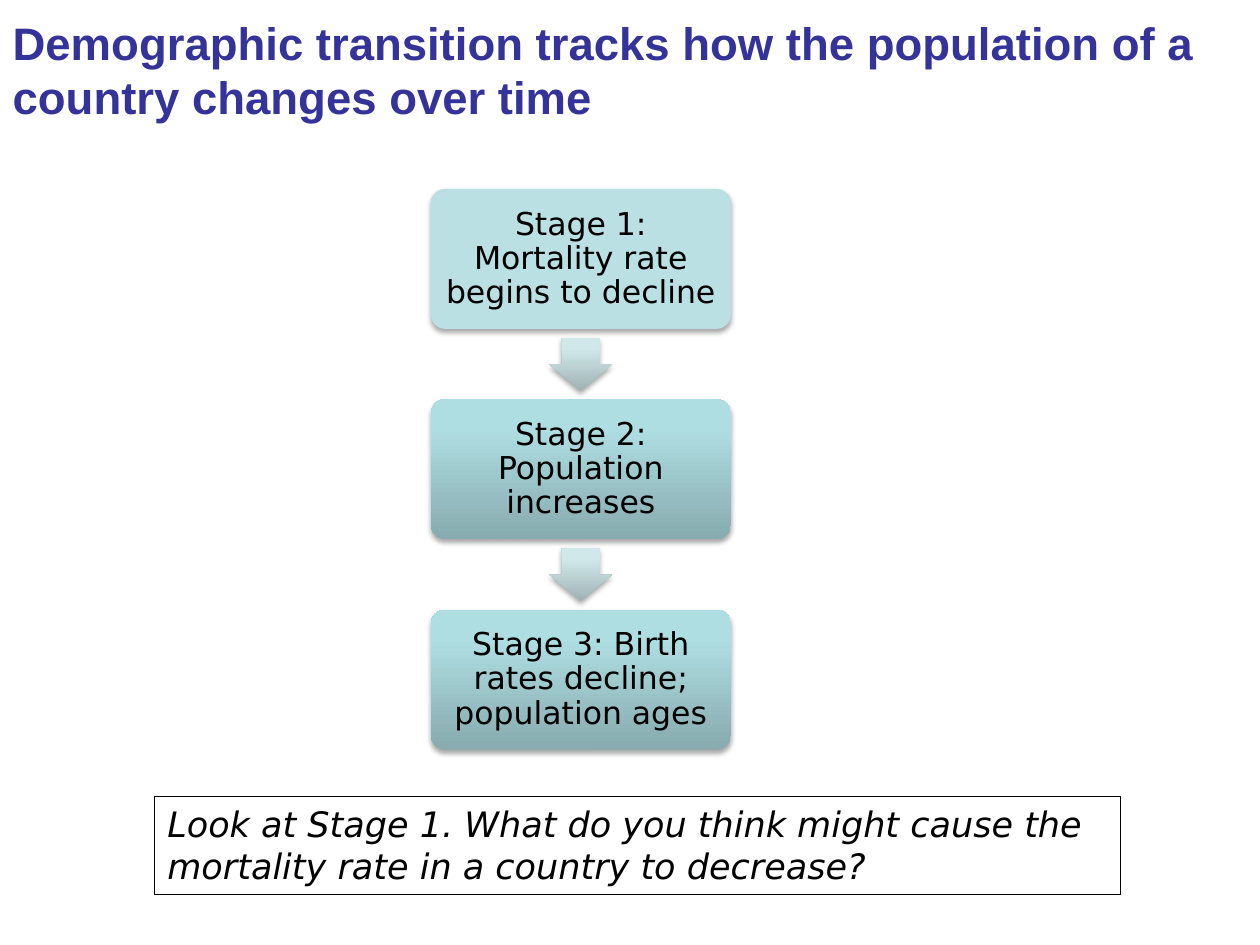
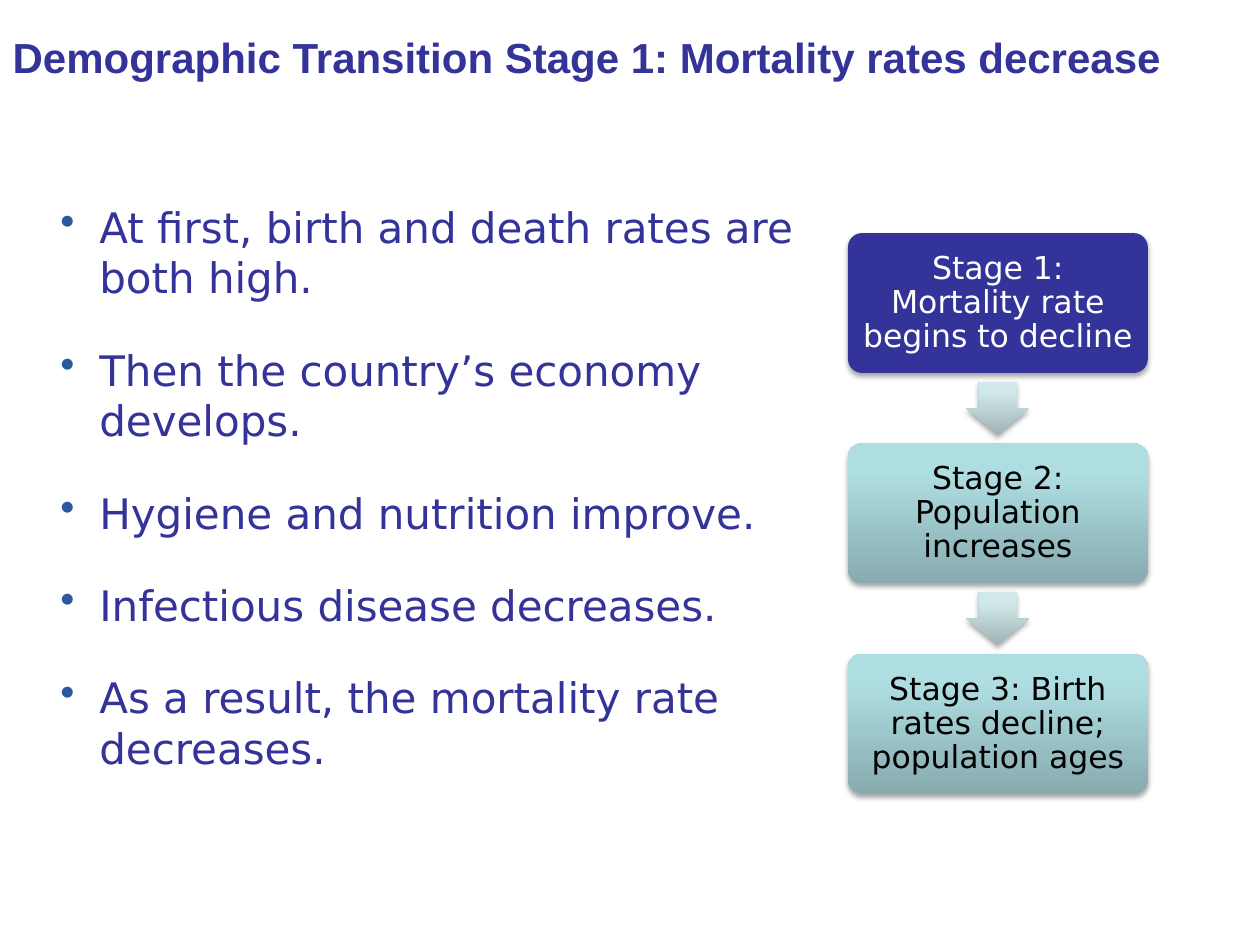
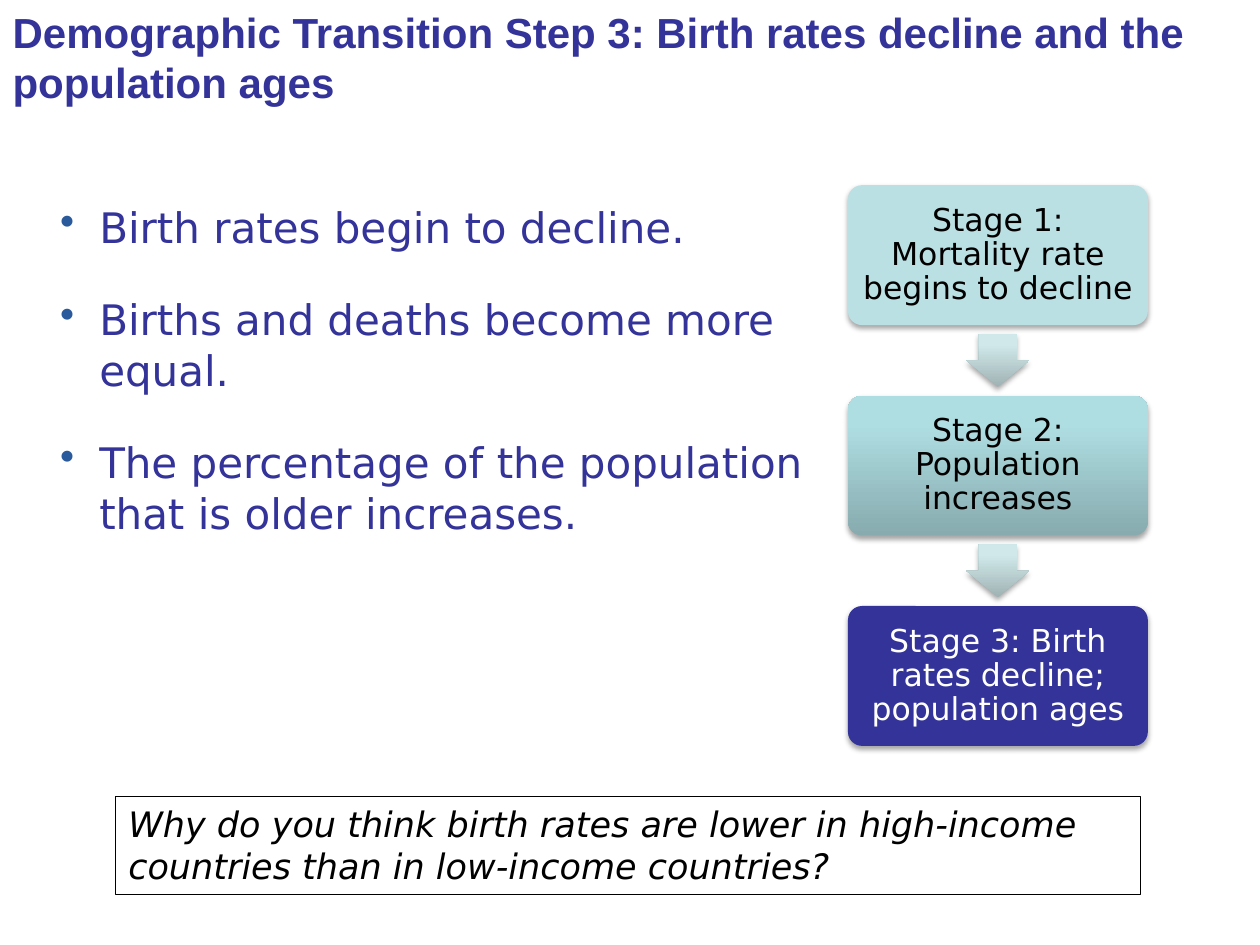
import pptx
import pptx.util
import pptx.dml.color
import pptx.enum.shapes
import pptx.enum.text
import pptx.oxml
import pptx.oxml.ns
import lxml.etree

Pt = pptx.util.Pt
KIND = pptx.enum.shapes.MSO_SHAPE
ALIGN = pptx.enum.text.PP_ALIGN
ANCHOR = pptx.enum.text.MSO_ANCHOR
qn = pptx.oxml.ns.qn

# Shared style
COLS, ROWS = 100, 75
INK = {"navy": "333399", "black": "000000", "white": "FFFFFF",
       "pale": "BBE0E3", "dot": "2B5A9C"}
FADE = {"box": ((0, "87ABAE"), (80, "AFDEE2"), (100, "AFE0E4")),
        "arrow": ((0, "A0B3B4"), (80, "D0E8EA"), (100, "D0EAEC"))}
HEAD, BODY = "Arial", "DejaVu Sans"
STAGES = ("Stage 1: Mortality rate begins to decline",
          "Stage 2: Population increases",
          "Stage 3: Birth rates decline; population ages")


def color(name):
    return pptx.dml.color.RGBColor.from_string(INK[name])


class Deck:
    def __init__(self):
        self.show = pptx.Presentation()
        self.show.slide_width = pptx.util.Inches(10)
        self.show.slide_height = pptx.util.Inches(7.5)
        self.slide = None

    def place(self, x, y, wide, high):
        """Turn columns and rows into lengths."""
        col = self.show.slide_width / COLS
        row = self.show.slide_height / ROWS
        return [round(n) for n in (x * col, y * row, wide * col, high * row)]

    def words(self, par, text, size, ink, font=BODY, bold=False, slant=False):
        run = par.add_run()
        run.text = text
        run.font.name, run.font.size = font, Pt(size)
        run.font.bold, run.font.italic = bold, slant
        run.font.color.rgb = color(ink)

    def title(self, text, size, top=0, wide=96):
        """Start a slide with its title."""
        self.slide = self.show.slides.add_slide(self.show.slide_layouts[5])
        head = self.slide.shapes.title
        head.left, head.top, head.width, head.height = self.place(0, top, wide, 9)
        frame = head.text_frame
        frame.auto_size = pptx.enum.text.MSO_AUTO_SIZE.NONE
        frame.vertical_anchor = ANCHOR.MIDDLE
        par = frame.paragraphs[0]
        par.alignment = ALIGN.LEFT
        self.words(par, text, size, "navy", HEAD, bold=True)

    def box(self, *area):
        shape = self.slide.shapes.add_textbox(*self.place(*area))
        shape.text_frame.word_wrap = True
        return shape

    def ask(self, text, left, wide):
        """Add the framed question at the foot."""
        shape = self.box(left, 63.2, wide, 7.8)
        shape.line.color.rgb = color("black")
        shape.line.width = Pt(0.5)
        self.words(shape.text_frame.paragraphs[0], text, 20, "black", slant=True)

    def points(self, lines, wide, high):
        """Add the bullet list."""
        frame = self.box(3.8, 15.5, wide, high).text_frame
        hang = pptx.util.Inches(0.31)
        for num, line in enumerate(lines):
            par = frame.add_paragraph() if num else frame.paragraphs[0]
            props = par._p.get_or_add_pPr()
            props.set("marL", str(hang))
            props.set("indent", str(-hang))
            tint = lxml.etree.SubElement(props, qn("a:buClr"))
            lxml.etree.SubElement(tint, qn("a:srgbClr"), val=INK["dot"])
            lxml.etree.SubElement(props, qn("a:buChar"), char="•")
            if num:
                par.space_before = Pt(24)
            self.words(par, line, 24, "navy")

    def form(self, group, kind, area, fill, fade, adjust):
        """Add a shape with a soft shadow, filled plain or with a fade."""
        shape = group.shapes.add_shape(kind, *self.place(*area))
        for num, share in enumerate(adjust):
            shape.adjustments[num] = share
        props = shape._element.spPr
        if fill:
            shape.fill.solid()
            shape.fill.fore_color.rgb = color(fill)
        else:
            shape.fill.gradient()
            shape.fill.gradient_angle = 90
            stops = props.find(qn("a:gradFill")).find(qn("a:gsLst"))
            for stop in list(stops):
                stops.remove(stop)
            for pos, tint in FADE[fade]:
                stop = lxml.etree.SubElement(stops, qn("a:gs"), pos=str(pos * 1000))
                lxml.etree.SubElement(stop, qn("a:srgbClr"), val=tint)
        shape.line.fill.background()
        shape.shadow.inherit = False
        shade = lxml.etree.SubElement(
            props.find(qn("a:effectLst")), qn("a:outerShdw"), blurRad=str(Pt(3.1)),
            dist=str(Pt(1.8)), dir="5400000", rotWithShape="0")
        tint = lxml.etree.SubElement(shade, qn("a:srgbClr"), val=INK["black"])
        lxml.etree.SubElement(tint, qn("a:alpha"), val="35000")
        return shape

    def flow(self, left, top, fills):
        """Stack the three stages with arrows between them."""
        group = self.slide.shapes.add_group_shape()
        for num, (text, fill) in enumerate(zip(STAGES, fills)):
            y = top + num * 16.7
            shape = self.form(group, KIND.ROUNDED_RECTANGLE,
                              (left, y, 23.8, 11.1), fill, "box", [0.1])
            frame = shape.text_frame
            frame.word_wrap = True
            frame.vertical_anchor = ANCHOR.MIDDLE
            frame.margin_left = frame.margin_right = pptx.util.Inches(0.07)
            frame.margin_top = frame.margin_bottom = pptx.util.Inches(0.07)
            par = frame.paragraphs[0]
            par.alignment = ALIGN.CENTER
            par.line_spacing = 0.9
            self.words(par, text, 18, "white" if fill == "navy" else "black")
            if num < len(STAGES) - 1:
                self.form(group, KIND.DOWN_ARROW, (left + 9.4, y + 11.8, 5, 4.2),
                          None, "arrow", [0.6, 0.5])


def main():
    deck = Deck()

    # Overview of the stages
    deck.title("Demographic transition tracks how the population of a country "
               "changes over time", 26, top=1)
    deck.ask("Look at Stage 1. What do you think might cause the mortality rate "
             "in a country to decrease?", 12.3, 76.6)
    deck.flow(34.2, 15, ("pale", None, None))

    # Stage 1
    deck.title("Demographic Transition Stage 1: Mortality rates decrease", 24,
               wide=100)
    deck.points(("At first, birth and death rates are both high.",
                 "Then the country’s economy develops.",
                 "Hygiene and nutrition improve.",
                 "Infectious disease decreases.",
                 "As a result, the mortality rate decreases."), 66.1, 50)
    deck.flow(67.3, 18.5, ("navy", None, None))

    # Stage 3
    deck.title("Demographic Transition Step 3: Birth rates decline and the "
               "population ages", 24)
    deck.ask("Why do you think birth rates are lower in high-income countries "
             "than in low-income countries?", 9.2, 81.3)
    deck.points(("Birth rates begin to decline.",
                 "Births and deaths become more equal.",
                 "The percentage of the population that is older increases."),
                62.7, 46.6)
    deck.flow(67.3, 14.7, ("pale", None, "navy"))

    deck.show.save("out.pptx")


if __name__ == "__main__":
    main()
